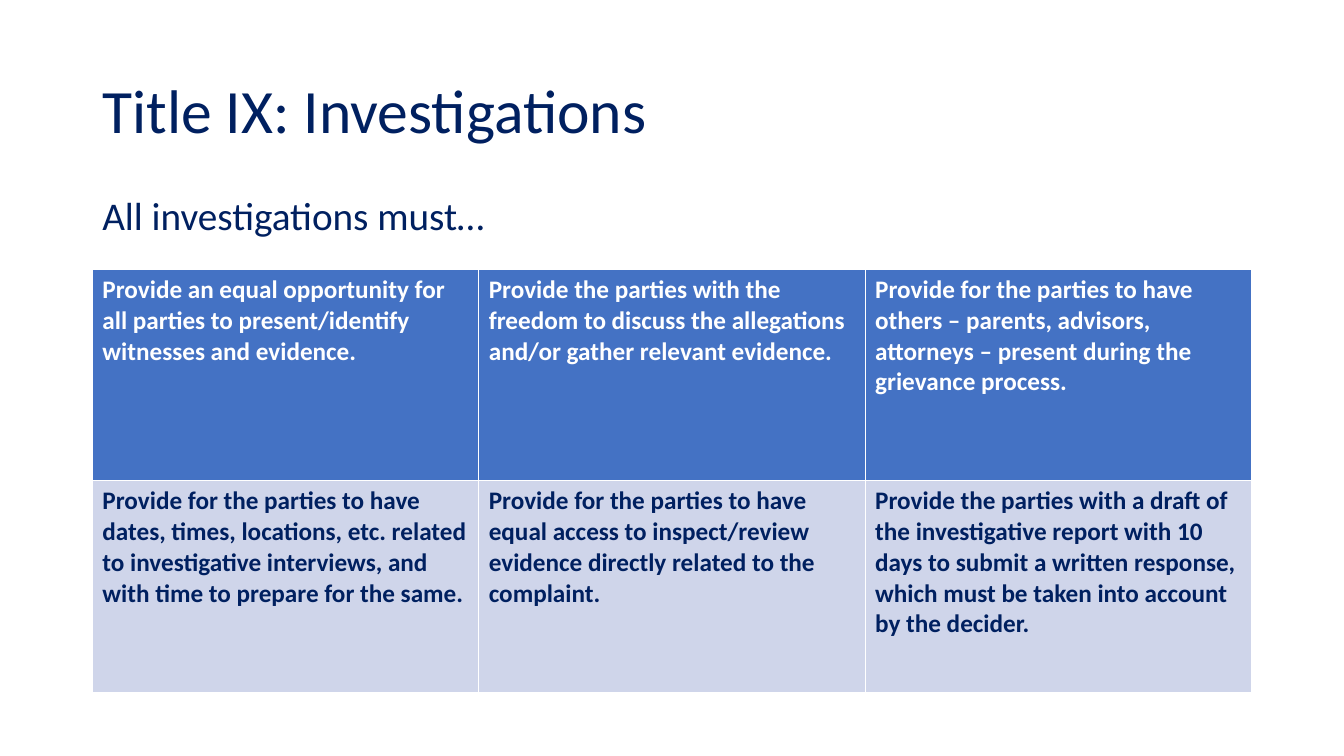
from pptx import Presentation
from pptx.dml.color import RGBColor
from pptx.enum.text import MSO_ANCHOR, MSO_AUTO_SIZE, PP_ALIGN
from pptx.util import Pt

LEFT, MIDDLE = PP_ALIGN.LEFT, MSO_ANCHOR.MIDDLE
NO_FIT, GROW = MSO_AUTO_SIZE.NONE, MSO_AUTO_SIZE.SHAPE_TO_FIT_TEXT

NAVY = RGBColor(0x00, 0x20, 0x60)
WHITE = RGBColor(0xFF, 0xFF, 0xFF)
BLUE = RGBColor(0x44, 0x72, 0xC4)
PALE_BLUE = RGBColor(0xCF, 0xD5, 0xEA)

MARGIN = Pt(66)
CONTENT_WIDTH = Pt(828)
ROW_HEIGHT = Pt(151)

REQUIREMENTS = [
    [
        "Provide an equal opportunity for all parties to present/identify witnesses and evidence.",
        "Provide the parties with the freedom to discuss the allegations and/or gather relevant evidence.",
        "Provide for the parties to have others – parents, advisors, attorneys – present during the "
        "grievance process.",
    ],
    [
        "Provide for the parties to have dates, times, locations, etc. related to investigative "
        "interviews, and with time to prepare for the same.",
        "Provide for the parties to have equal access to inspect/review evidence directly related "
        "to the complaint.",
        "Provide the parties with a draft of the investigative report with 10 days to submit a "
        "written response, which must be taken into account by the decider.",
    ],
]
ROW_COLOURS = [(BLUE, WHITE), (PALE_BLUE, NAVY)]


def write(frame, text, size, colour, bold=False):
    para = frame.paragraphs[0]
    para.alignment = LEFT
    span = para.add_run()
    span.text = text
    formats = {"name": "Calibri", "size": Pt(size), "bold": bold}
    for name, value in formats.items():
        setattr(span.font, name, value)
    span.font.color.rgb = colour
    return para


deck = Presentation()
deck.slide_width, deck.slide_height = Pt(960), Pt(540)
page = deck.slides.add_slide(deck.slide_layouts.get_by_name("Title Only"))

title = page.shapes.title
placement = {"left": MARGIN, "top": Pt(28.75), "width": CONTENT_WIDTH, "height": Pt(104.4)}
for name, value in placement.items():
    setattr(title, name, value)
title.text_frame.auto_size = NO_FIT
title.text_frame.vertical_anchor = MIDDLE
write(title.text_frame, "Title IX: Investigations", 44, NAVY).line_spacing = 0.9

# The default table style supplies the white borders and the thick line under the first row.
table = page.shapes.add_table(
    len(REQUIREMENTS), len(REQUIREMENTS[0]), MARGIN, Pt(192.5), CONTENT_WIDTH, 2 * ROW_HEIGHT
).table
for row, texts, (fill, colour) in zip(table.rows, REQUIREMENTS, ROW_COLOURS):
    row.height = ROW_HEIGHT
    for cell, text in zip(row.cells, texts):
        cell.fill.solid()
        cell.fill.fore_color.rgb = fill
        write(cell.text_frame, text, 18, colour, bold=True)

lead_in = page.shapes.add_textbox(MARGIN, Pt(133.2), Pt(811), Pt(41.2))
lead_in.text_frame.word_wrap = True
lead_in.text_frame.auto_size = GROW
write(lead_in.text_frame, "All investigations must…", 28, NAVY)

deck.save("out.pptx")
